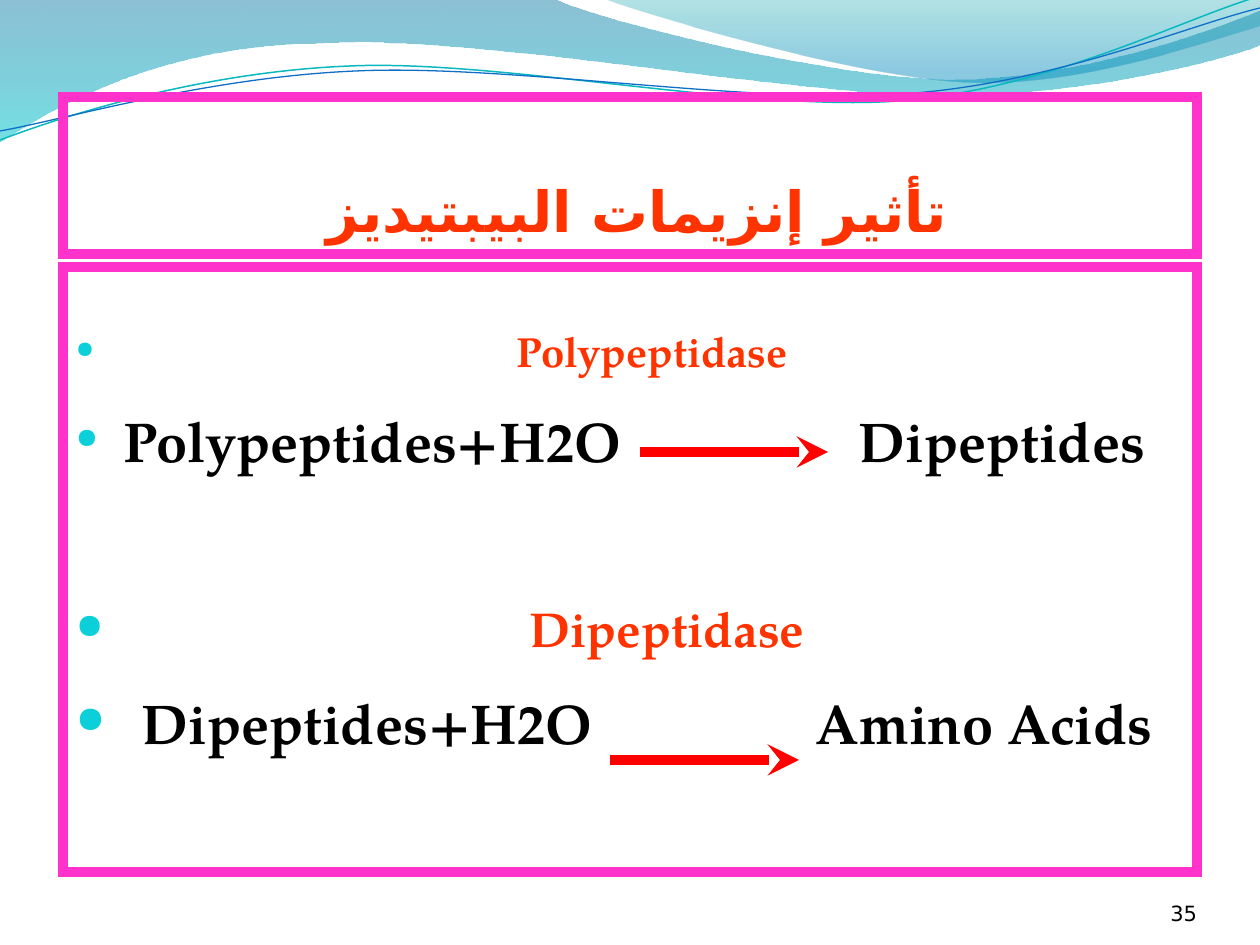
import pptx
import pptx.util
import pptx.dml.color
import pptx.enum.shapes
import pptx.enum.text
import pptx.oxml
import pptx.oxml.ns
from lxml import etree

ALIGN = pptx.enum.text.PP_ALIGN
ANCHOR = pptx.enum.text.MSO_ANCHOR
Pt = pptx.util.Pt
qn = pptx.oxml.ns.qn

THEME = dict(
    frame="FF33CC", accent="FF3300", ink="000000", dot="0BD0D9", arrow="FF0000",
    head="Calibri", serif="TeX Gyre Pagella", sans="DejaVu Sans", bold_line=6,
    title=32.4, number=12,
)
TITLE = "تأثير إنزيمات البيبتيديز"
NUMBER = "35"
# text, size, colour, space before in pt, text start, tab stop, bullet size in %
LINES = [
    ("Polypeptidase", 24, "accent", 0, 517, None, 55),
    ("Polypeptides+H2O\tDipeptides", 32, "ink", 17.2, 124, 859, 50),
    ("Dipeptidase", 28, "accent", 71.4, 530, None, 71),
    ("Dipeptides+H2O\tAmino Acids", 32, "ink", 17.6, 142, 816, 66),
]
BOXES = dict(title=(63, 97, 1134, 157), body=(63, 267, 1134, 605),
             number=(1092, 876, 105, 50))
ARROWS = [(640, 452, 828), (610, 760, 799)]

# Each outline starts at a point; a pair is a line, six numbers are a curve.
WAVES = [
    dict(path=[(0, -1), (554, -1), (600, 21, 837, 79, 955, 79),
               (1074, 79, 1207, 33, 1260, 11), (1261, 45),
               (1239, 55, 1096, 96, 940, 95), (784, 95, 481, 35, 324, 43),
               (163, 44, 58, 105, -1, 142)],
         fill=[("0074A1", 45, 0), ("00C6CF", 55, 1)]),
    dict(path=[(604, -1), (641, 14, 859, 78, 969, 82),
               (1079, 87, 1211, 40, 1260, 26), (1260, 0)],
         fill=[("00A1A9", 30, 0), ("008BBF", 45, 0.8)]),
    dict(path=[(0, 140), (60, 117, 199, 72, 349, 66),
               (498, 59, 747, 112, 898, 101), (1050, 89, 1182, 19, 1257, -3)],
         line=("0AB8BF", 0.85)),
    dict(path=[(0, 131), (59, 121, 207, 77, 357, 71),
               (508, 64, 752, 105, 903, 94), (1053, 84, 1186, 26, 1260, 8)],
         line=("0F6FC6", 0.75)),
]


def px(n):
    return round(n * 914400 / 126)


def rgb(code):
    return pptx.dml.color.RGBColor.from_string(code)


def sub(parent, tag, **attrs):
    node = etree.SubElement(parent, qn(tag))
    for key, value in attrs.items():
        node.set(key, str(value))
    return node


def stroke(line, color, width):
    line.color.rgb = rgb(color)
    line.width = Pt(width)


def bend(shape, path):
    """Merge each curve's three straight segments into one cubic curve."""
    steps = iter(list(shape._element.iter(qn("a:lnTo"))))
    for seg in path[1:]:
        first = next(steps)
        if len(seg) == 6:
            first.tag = qn("a:cubicBezTo")
            for _ in range(2):
                step = next(steps)
                first.append(step[0])
                step.getparent().remove(step)


def wave(slide, path, fill=None, line=None):
    points = [(px(seg[i]), px(seg[i + 1]))
              for seg in path for i in range(0, len(seg), 2)]
    build = slide.shapes.build_freeform(*points[0])
    build.add_line_segments(points[1:], close=fill is not None)
    shape = build.convert_to_shape()
    bend(shape, path)
    shape.shadow.inherit = False
    if line:
        shape.fill.background()
        stroke(shape.line, *line)
        return
    shape.line.fill.background()
    shape.fill.gradient()
    shape.fill.gradient_angle = 270
    for stop, (color, alpha, pos) in zip(shape.fill.gradient_stops, fill):
        stop.color.rgb = rgb(color)
        stop.position = pos
        sub(stop._gs.find(qn("a:srgbClr")), "a:alpha", val=alpha * 1000)


def frame_box(shape):
    stroke(shape.line, THEME["frame"], THEME["bold_line"])
    sub(shape.line._get_or_add_ln(), "a:miter", lim=800000)


def margins(frame, left, top, right, bottom):
    frame.margin_left, frame.margin_top = px(left), px(top)
    frame.margin_right, frame.margin_bottom = px(right), px(bottom)
    frame.word_wrap = True


def style(para, face, size, color, bold):
    for run in para.runs:
        font = run.font
        font.name, font.size, font.bold = face, Pt(size), bold
        font.color.rgb = rgb(THEME[color])


def head(slide):
    shape = slide.shapes.title
    slide.shapes._spTree.append(shape._element)  # in front of the waves
    shape.left, shape.top, shape.width, shape.height = map(px, BOXES["title"])
    frame_box(shape)
    frame = shape.text_frame
    frame.text = TITLE
    margins(frame, 14, 6, 0, 10)
    frame.vertical_anchor = ANCHOR.BOTTOM
    para = frame.paragraphs[0]
    para.alignment = ALIGN.CENTER
    para._p.get_or_add_pPr().set("rtl", "1")
    style(para, THEME["head"], THEME["title"], "accent", True)
    sub(para.runs[0]._r.rPr, "a:cs", typeface=THEME["sans"])


def body(slide):
    shape = slide.shapes.add_textbox(*map(px, BOXES["body"]))
    frame_box(shape)
    frame = shape.text_frame
    margins(frame, 13, 59, 13, 6)
    frame.text = "\n".join(line[0] for line in LINES)
    edge = BOXES["body"][0] + 13
    for para, (_, size, color, gap, start, tab, dot) in zip(frame.paragraphs, LINES):
        para.space_before = Pt(gap)
        style(para, THEME["serif"], size, color, True)
        props = para._p.get_or_add_pPr()
        props.set("marL", str(px(start - edge)))
        props.set("indent", str(-px(start - edge)))
        sub(sub(props, "a:buClr"), "a:srgbClr", val=THEME["dot"])
        sub(props, "a:buSzPct", val=dot * 1000)
        sub(props, "a:buFont", typeface="OpenSymbol")
        sub(props, "a:buChar", char="●")
        if tab:
            sub(sub(props, "a:tabLst"), "a:tab", pos=px(tab - edge), algn="l")


def number(slide):
    shape = slide.shapes.add_textbox(*map(px, BOXES["number"]))
    frame = shape.text_frame
    frame.text = NUMBER
    margins(frame, 0, 0, 0, 0)
    frame.vertical_anchor = ANCHOR.BOTTOM
    frame.paragraphs[0].alignment = ALIGN.RIGHT
    style(frame.paragraphs[0], THEME["sans"], THEME["number"], "ink", False)


def arrow(slide, start, y, end):
    link = slide.shapes.add_connector(
        pptx.enum.shapes.MSO_CONNECTOR.STRAIGHT, px(start), px(y), px(end), px(y))
    stroke(link.line, THEME["arrow"], THEME["bold_line"])
    sub(link.line._get_or_add_ln(), "a:tailEnd", type="stealth")
    sub(link._element.spPr, "a:effectLst")


def main():
    deck = pptx.Presentation()
    deck.slide_width, deck.slide_height = px(1260), px(945)
    slide = deck.slides.add_slide(deck.slide_layouts[5])
    for item in WAVES:
        wave(slide, **item)
    head(slide)
    body(slide)
    number(slide)
    for item in ARROWS:
        arrow(slide, *item)
    deck.save("out.pptx")


if __name__ == "__main__":
    main()
